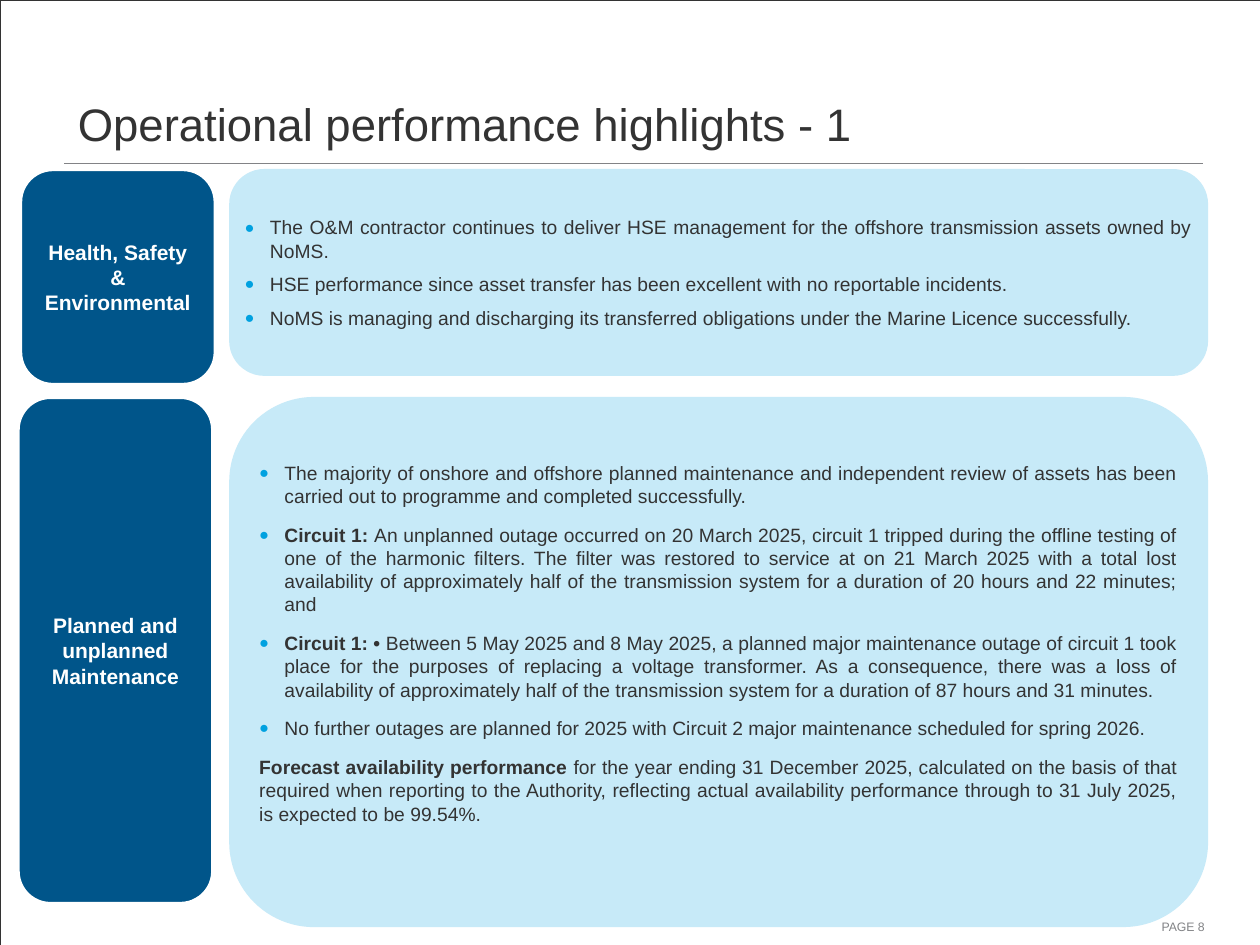
import pptx
import pptx.dml.color
import pptx.enum.shapes
import pptx.enum.text
import pptx.util
from lxml import etree
from pptx.oxml.ns import qn

Pt = pptx.util.Pt
ALIGN = pptx.enum.text.PP_ALIGN
ANCHOR = pptx.enum.text.MSO_ANCHOR
SHAPE = pptx.enum.shapes.MSO_SHAPE

COLORS = {
    "text": "333333",
    "grey": "828386",
    "label": "00558A",
    "panel": "C7EAF8",
    "bullet": "00A1E0",
    "white": "FFFFFF",
}


def rgb(name):
    return pptx.dml.color.RGBColor.from_string(COLORS[name])


class SlideBuilder:
    font = "Arial"

    def __init__(self, slide):
        self.s = slide

    def add_run(self, p, text, size, color="text", bold=False):
        r = p.add_run()
        r.text = text
        r.font.name = self.font
        r.font.size = Pt(size)
        r.font.bold = bold
        r.font.color.rgb = rgb(color)

    def prepare_frame(self, sp, anchor, insets):
        """Wrap the text and set left, top, right and bottom insets."""
        tf = sp.text_frame
        tf.word_wrap = True
        tf.vertical_anchor = anchor
        (tf.margin_left, tf.margin_top,
         tf.margin_right, tf.margin_bottom) = map(Pt, insets)
        return tf

    def set_bullet(self, p, bulleted, indent=14.4):
        pPr = p._p.get_or_add_pPr()
        pPr.set("marL", str(Pt(indent if bulleted else 0)))
        pPr.set("indent", str(Pt(-indent if bulleted else 0)))
        if not bulleted:
            etree.SubElement(pPr, qn("a:buNone"))
            return
        color = etree.SubElement(pPr, qn("a:buClr"))
        etree.SubElement(color, qn("a:srgbClr"), val=COLORS["bullet"])
        etree.SubElement(pPr, qn("a:buSzPct"), val="85000")
        etree.SubElement(pPr, qn("a:buFont"), typeface=self.font)
        etree.SubElement(pPr, qn("a:buChar"), char="●")

    def shape(self, kind, box, fill=None, line=None, width=0):
        sp = self.s.shapes.add_shape(kind, *map(Pt, box))
        sp.shadow.inherit = False
        if fill:
            sp.fill.solid()
            sp.fill.fore_color.rgb = rgb(fill)
        else:
            sp.fill.background()
        if line:
            sp.line.color.rgb = rgb(line)
            sp.line.width = Pt(width)
        else:
            sp.line.fill.background()
        return sp

    def rule(self, x1, x2, y):
        line = self.s.shapes.add_connector(
            pptx.enum.shapes.MSO_CONNECTOR.STRAIGHT, Pt(x1), Pt(y), Pt(x2), Pt(y))
        line.line.color.rgb = rgb("grey")
        line.line.width = Pt(0.75)
        etree.SubElement(line._element.spPr, qn("a:effectLst"))

    def text(self, box, text, size, color, align, anchor, insets, spacing=1.0):
        sp = self.s.shapes.add_textbox(*map(Pt, box))
        p = self.prepare_frame(sp, anchor, insets).paragraphs[0]
        p.alignment = align
        p.line_spacing = spacing
        self.add_run(p, text, size, color)

    def label(self, box, text):
        sp = self.shape(SHAPE.ROUNDED_RECTANGLE, box, "label", "white", 2)
        tf = self.prepare_frame(sp, ANCHOR.MIDDLE, (7.2, 3.6, 7.2, 3.6))
        p = tf.paragraphs[0]
        p.alignment = ALIGN.CENTER
        self.add_run(p, text, 12, "white", True)

    def panel(self, box, items, gap, corner, bottom=3):
        """Each item is (bulleted, bold lead-in, body text)."""
        sp = self.shape(SHAPE.ROUNDED_RECTANGLE, box, "panel")
        sp.adjustments[0] = corner
        tf = self.prepare_frame(sp, ANCHOR.MIDDLE, (3, 3, 3, bottom))
        for i, (bulleted, lead, body) in enumerate(items):
            p = tf.add_paragraph() if i else tf.paragraphs[0]
            p.alignment = ALIGN.JUSTIFY
            p.space_after = Pt(gap)
            self.set_bullet(p, bulleted)
            if lead:
                self.add_run(p, lead, 11, bold=True)
            self.add_run(p, body, 11)


SAFETY = [
    (True, "", "The O&M contractor continues to deliver HSE management for the "
     "offshore transmission assets owned by NoMS."),
    (True, "", "HSE performance since asset transfer has been excellent with no "
     "reportable incidents."),
    (True, "", "NoMS is managing and discharging its transferred obligations under "
     "the Marine Licence successfully."),
]
MAINTENANCE = [
    (True, "", "The majority of onshore and offshore planned maintenance and "
     "independent review of assets has been carried out to programme and "
     "completed successfully."),
    (True, "Circuit 1: ", "An unplanned outage occurred on 20 March 2025, circuit 1 "
     "tripped during the offline testing of one of the harmonic filters. The filter "
     "was restored to service at on 21 March 2025 with a total lost availability of "
     "approximately half of the transmission system for a duration of 20 hours and "
     "22 minutes; and"),
    (True, "Circuit 1: • ", "Between 5 May 2025 and 8 May 2025, a planned major "
     "maintenance outage of circuit 1 took place for the purposes of replacing a "
     "voltage transformer. As a consequence, there was a loss of availability of "
     "approximately half of the transmission system for a duration of 87 hours and "
     "31 minutes."),
    (True, "", "No further outages are planned for 2025 with Circuit 2 major "
     "maintenance scheduled for spring 2026."),
    (False, "Forecast availability performance ", "for the year ending 31 December "
     "2025, calculated on the basis of that required when reporting to the "
     "Authority, reflecting actual availability performance through to 31 July "
     "2025, is expected to be 99.54%."),
]


def main():
    prs = pptx.Presentation()
    prs.slide_width, prs.slide_height = Pt(720), Pt(540)
    b = SlideBuilder(prs.slides.add_slide(prs.slide_layouts[6]))

    b.text((599, 522, 96.5, 15.8), "PAGE 8", 7, "grey", ALIGN.RIGHT,
           ANCHOR.TOP, (7.2, 3.6, 7.2, 3.6))
    b.shape(SHAPE.RECTANGLE, (0, 0, 720, 540), line="text", width=0.25)
    b.rule(36.7, 687.6, 93.4)
    b.text((37.4, 61.2, 471.6, 28.1), "Operational performance highlights - 1", 26,
           "text", ALIGN.LEFT, ANCHOR.BOTTOM, (7.2, 3, 3, 3), 0.9)

    b.label((11.7, 96.8, 111.4, 123), "Health, Safety & Environmental")
    b.label((10.3, 227, 111.4, 289.4), "Planned and unplanned Maintenance")
    b.panel((131, 96.6, 559.4, 118.2), SAFETY, gap=6, corner=0.17)
    b.panel((131, 226.8, 559.4, 303), MAINTENANCE, gap=9, corner=0.16, bottom=24.6)

    prs.save("out.pptx")


if __name__ == "__main__":
    main()
